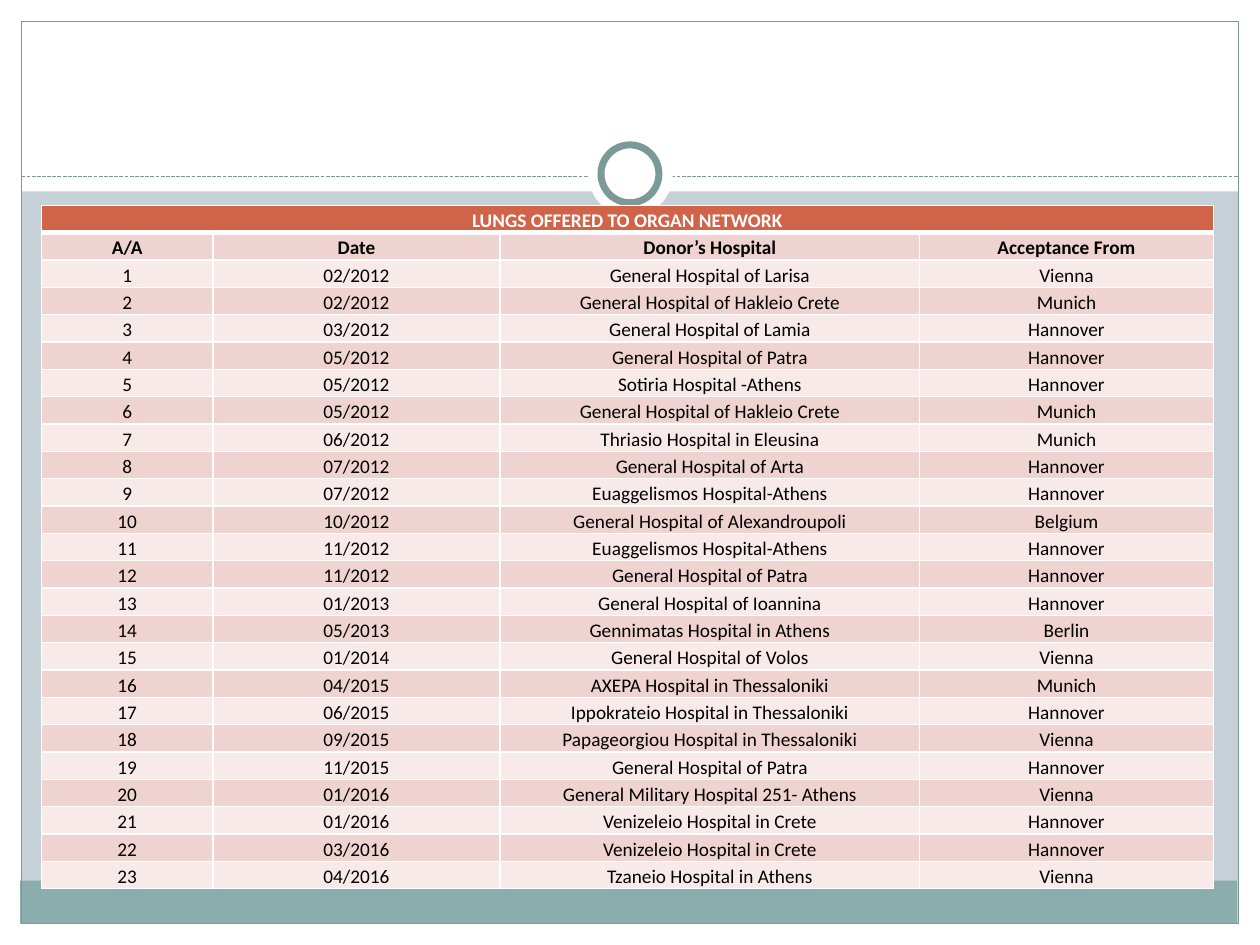
from lxml import etree
from pptx import Presentation
from pptx.dml.color import RGBColor
from pptx.enum.dml import MSO_LINE
from pptx.enum.shapes import MSO_CONNECTOR, MSO_SHAPE
from pptx.enum.text import MSO_ANCHOR, PP_ALIGN
from pptx.oxml.ns import qn
from pptx.util import Inches, Pt

RECT, OVAL = MSO_SHAPE.RECTANGLE, MSO_SHAPE.OVAL
STRAIGHT, DASH = MSO_CONNECTOR.STRAIGHT, MSO_LINE.SQUARE_DOT
CENTER, TOP, MIDDLE = PP_ALIGN.CENTER, MSO_ANCHOR.TOP, MSO_ANCHOR.MIDDLE

TITLE = "LUNGS OFFERED TO ORGAN NETWORK"
HEADS = ("Α/Α", "Date", "Donor’s Hospital", "Acceptance From")
OFFERS = [
    ("02/2012", "General Hospital of Larisa", "Vienna"),
    ("02/2012", "General Hospital of Hakleio Crete", "Munich"),
    ("03/2012", "General Hospital of Lamia", "Hannover"),
    ("05/2012", "General Hospital of Patra", "Hannover"),
    ("05/2012", "Sotiria Hospital -Athens", "Hannover"),
    ("05/2012", "General Hospital of Hakleio Crete", "Munich"),
    ("06/2012", "Thriasio Hospital in Eleusina", "Munich"),
    ("07/2012", "General Hospital of Arta", "Hannover"),
    ("07/2012", "Euaggelismos Hospital-Athens", "Hannover"),
    ("10/2012", "General Hospital of Alexandroupoli", "Belgium"),
    ("11/2012", "Euaggelismos Hospital-Athens", "Hannover"),
    ("11/2012", "General Hospital of Patra", "Hannover"),
    ("01/2013", "General Hospital of Ioannina", "Hannover"),
    ("05/2013", "Gennimatas Hospital in Athens", "Berlin"),
    ("01/2014", "General Hospital of Volos", "Vienna"),
    ("04/2015", "AXEPA Hospital in Thessaloniki", "Munich"),
    ("06/2015", "Ippokrateio Hospital in Thessaloniki", "Hannover"),
    ("09/2015", "Papageorgiou Hospital in Thessaloniki", "Vienna"),
    ("11/2015", "General Hospital of Patra", "Hannover"),
    ("01/2016", "General Military Hospital 251- Athens", "Vienna"),
    ("01/2016", "Venizeleio Hospital in Crete", "Hannover"),
    ("03/2016", "Venizeleio Hospital in Crete", "Hannover"),
    ("04/2016", "Tzaneio Hospital in Athens", "Vienna"),
]
COLS = (1.36, 2.28, 3.33, 2.33)
LEFT, HIGH, TALL = 0.33, 1.63, 5.27
WIDE, DEEP, EDGE = 10, 7.5, 0.17

THEME = {
    "page": "C5D1D7", "white": "FFFFFF", "black": "000000",
    "band": "8CADAE", "line": "7C999A", "head": "D16349",
    "dark": "EED3D0", "light": "F7EAE9",
    "font": "Calibri", "size": 11, "space": 1.15,
    "thin": 0.75, "ring": 4, "rule": 1, "bold_rule": 3,
}

FRAME = [
    (RECT, (0, DEEP - EDGE, WIDE, EDGE), "white", None),
    (RECT, (0, 0, WIDE, 1.52), "white", None),
    (RECT, (0, 0, EDGE, DEEP), "white", None),
    (RECT, (WIDE - EDGE, 0, EDGE, DEEP), "white", None),
    (RECT, (0.16, 6.99, 9.66, 0.34), "band", None),
    (RECT, (EDGE, EDGE, WIDE - 2 * EDGE, DEEP - 2 * EDGE), None, "thin"),
]
RINGS = [
    (OVAL, (4.67, 1.05, 0.67, 0.67), "white", None),
    (OVAL, (4.77, 1.15, 0.46, 0.46), "white", "ring"),
]


def color(name):
    return RGBColor.from_string(THEME[name])


def paint(fill, name):
    fill.solid()
    fill.fore_color.rgb = color(name)


def draw(slide, kind, box, fill, line):
    shape = slide.shapes.add_shape(kind, *map(Inches, box))
    shape.shadow.inherit = False
    if fill:
        paint(shape.fill, fill)
    else:
        shape.fill.background()
    if line:
        shape.line.color.rgb = color("line")
        shape.line.width = Pt(THEME[line])
    else:
        shape.line.fill.background()


def divide(slide, y):
    ends = (EDGE, y, WIDE - EDGE, y)
    line = slide.shapes.add_connector(STRAIGHT, *map(Inches, ends))
    line.line.color.rgb = color("line")
    line.line.width = Pt(THEME["thin"])
    line.line.dash_style = DASH
    etree.SubElement(line._element.spPr, qn("a:effectLst"))


def write(cell, text, ink="black", bold=False, anchor=TOP):
    cell.margin_left = cell.margin_right = Inches(0.07)
    cell.margin_top = cell.margin_bottom = 0
    cell.vertical_anchor = anchor
    para = cell.text_frame.paragraphs[0]
    para.alignment = CENTER
    para.line_spacing = THEME["space"]
    run = para.add_run()
    run.text = text
    font = run.font
    font.name, font.size, font.bold = THEME["font"], Pt(THEME["size"]), bold
    font.color.rgb = color(ink)


def border(cell, **rules):
    props = cell._tc.get_or_add_tcPr()
    for side in "LRTB":
        width = Pt(THEME[rules.get(side, "rule")])
        line = etree.SubElement(props, qn("a:ln" + side), w=str(width))
        fill = etree.SubElement(line, qn("a:solidFill"))
        etree.SubElement(fill, qn("a:srgbClr"), val=THEME["white"])


def tabulate(slide):
    rows = [(TITLE, "", "", ""), HEADS]
    rows += [(str(n), *offer) for n, offer in enumerate(OFFERS, 1)]
    box = (LEFT, HIGH, sum(COLS), TALL)
    table = slide.shapes.add_table(len(rows), len(COLS), *map(Inches, box)).table
    for col, width in zip(table.columns, COLS):
        col.width = Inches(width)
    table.cell(0, 0).merge(table.cell(0, len(COLS) - 1))
    for r, row in enumerate(rows):
        table.rows[r].height = Inches(TALL / len(rows))
        shade = "head" if r == 0 else "dark" if r % 2 else "light"
        rules = {0: {"B": "bold_rule"}, 1: {"T": "bold_rule"}}.get(r, {})
        for c, text in enumerate(row):
            cell = table.cell(r, c)
            border(cell, **rules)
            paint(cell.fill, shade)
            write(cell, text, ink="black" if r else "white", bold=r < 2,
                  anchor=MIDDLE if r == 1 and c > 1 else TOP)


def main():
    deck = Presentation()
    deck.slide_width, deck.slide_height = Inches(WIDE), Inches(DEEP)
    slide = deck.slides.add_slide(deck.slide_layouts[6])
    paint(slide.background.fill, "page")
    for part in FRAME:
        draw(slide, *part)
    divide(slide, 1.4)
    for part in RINGS:
        draw(slide, *part)
    tabulate(slide)
    deck.save("out.pptx")


if __name__ == "__main__":
    main()
